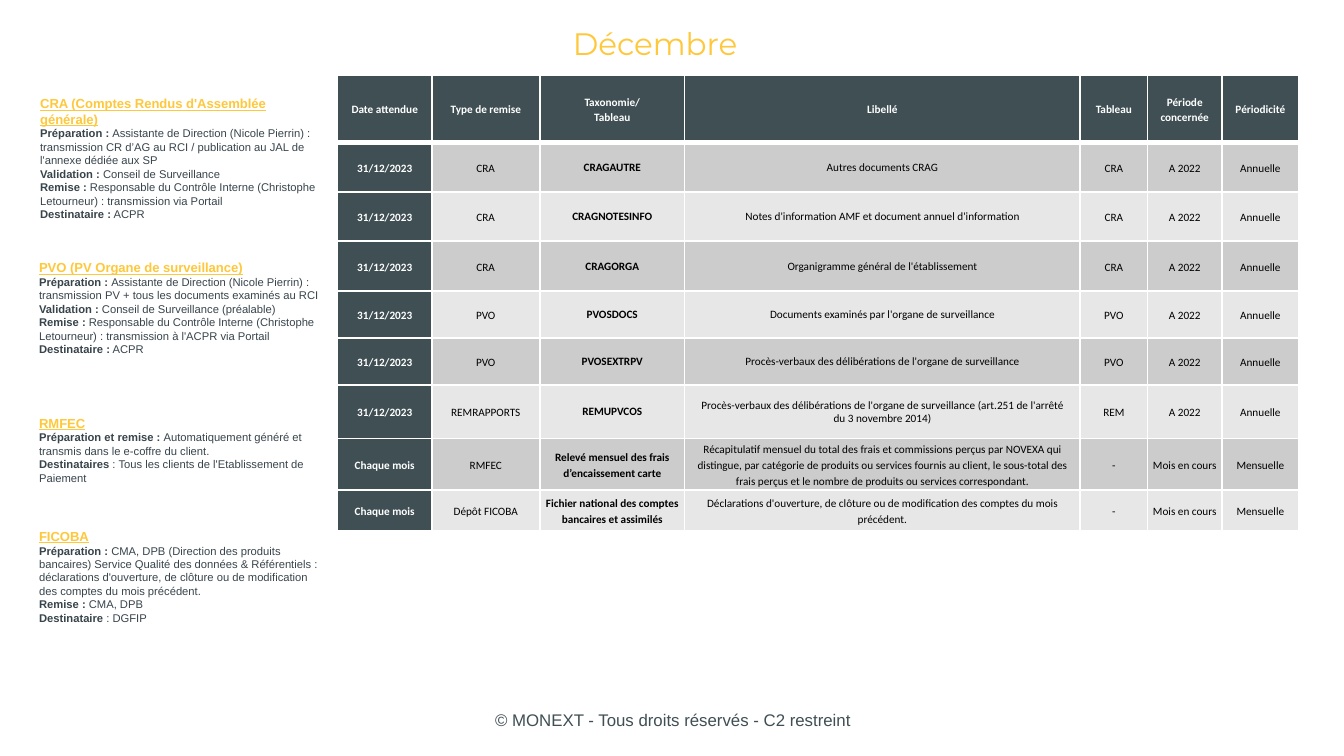
from lxml import etree
from pptx import Presentation
from pptx.dml.color import RGBColor
from pptx.enum.text import MSO_ANCHOR, PP_ALIGN
from pptx.oxml.ns import qn
from pptx.util import Cm, Pt

CENTER, LEFT = PP_ALIGN.CENTER, PP_ALIGN.LEFT
MIDDLE, TOP = MSO_ANCHOR.MIDDLE, MSO_ANCHOR.TOP

SLATE = RGBColor(0x40, 0x4F, 0x54)
INK = RGBColor(0x38, 0x44, 0x4B)
YELLOW = RGBColor(0xFF, 0xC8, 0x3A)
WHITE = RGBColor(0xFF, 0xFF, 0xFF)
BLACK = RGBColor(0x00, 0x00, 0x00)
GREY = RGBColor(0xCC, 0xCC, 0xCC)
LIGHT_GREY = RGBColor(0xE7, 0xE7, 0xE7)


class Page:
    """Current slide and its house style."""

    heading = {"name": "Arial", "size": Pt(7), "bold": True, "underline": True}
    label = {"name": "Arial", "size": Pt(6), "bold": True}
    body = {"name": "Arial", "size": Pt(6), "bold": False}
    cell_font = {"name": "Calibri", "size": Pt(6)}

    def __init__(self, deck):
        self.slide = deck.slides.add_slide(deck.slide_layouts[6])

    def fill_frame(self, frame, lines, align, spacing=None):
        """Each line is a list of (text, format, colour) spans."""
        for index, spans in enumerate(lines):
            para = frame.paragraphs[0] if index == 0 else frame.add_paragraph()
            para.alignment = align
            if spacing:
                para.line_spacing = spacing
            for text, style, color in spans:
                span = para.add_run()
                span.text = text
                for name, value in style.items():
                    setattr(span.font, name, value)
                span.font.color.rgb = color

    def text(self, left, top, width, height, lines, align=LEFT, anchor=TOP):
        box = self.slide.shapes.add_textbox(Cm(left), Cm(top), Cm(width), Cm(height))
        box.text_frame.word_wrap = True
        box.text_frame.vertical_anchor = anchor
        self.fill_frame(box.text_frame, lines, align)

    def note(self, left, top, height, title, details):
        lines = [[(title, self.heading, YELLOW)]]
        for label, text in details:
            lines.append([(label, self.label, INK), (text, self.body, INK)])
        self.text(left, top, 5.87, height, lines)

    def border(self, cell, bottom):
        properties = cell._tc.get_or_add_tcPr()
        for side, width in (("lnL", 1), ("lnR", 1), ("lnT", 1), ("lnB", bottom)):
            line = etree.SubElement(properties, qn(f"a:{side}"), w=str(Pt(width)))
            fill = etree.SubElement(line, qn("a:solidFill"))
            etree.SubElement(fill, qn("a:srgbClr"), val=str(WHITE))

    def cell(self, cell, text, fill, color, bold, roomy, bottom):
        self.border(cell, bottom)
        cell.fill.solid()
        cell.fill.fore_color.rgb = fill
        cell.vertical_anchor = MIDDLE
        cell.margin_left = cell.margin_right = Cm(0.25 if roomy else 0.08)
        cell.margin_top = cell.margin_bottom = Cm(0.25 if roomy else 0.05)
        style = {**self.cell_font, "bold": bold}
        lines = [[(part, style, color)] for part in text.split("\n")]
        self.fill_frame(cell.text_frame, lines, CENTER, None if roomy else 1.15)

    def table(self, left, top, widths, heights, rows):
        table = self.slide.shapes.add_table(
            len(rows), len(widths), Cm(left), Cm(top), Cm(sum(widths)), Cm(sum(heights))
        ).table
        table.horz_banding = False
        for column, width in zip(table.columns, widths):
            column.width = Cm(width)
        for r, (row, height) in enumerate(zip(rows, heights)):
            table.rows[r].height = Cm(height)
            band = GREY if r % 2 else LIGHT_GREY
            for c, text in enumerate(row):
                dark = r == 0 or c == 0
                self.cell(
                    table.cell(r, c), text,
                    fill=SLATE if dark else band,
                    color=WHITE if dark else BLACK,
                    bold=dark or c == 2,
                    roomy=1 <= r <= 6 and c in (2, 3),
                    bottom=3 if r == 0 else 1,
                )


HEADERS = ("Date attendue", "Type de remise", "Taxonomie/\nTableau", "Libellé",
           "Tableau", "Période concernée", "Périodicité")

# Type, taxonomy, wording, table
YEARLY = (
    ("CRA", "CRAGAUTRE", "Autres documents CRAG", "CRA"),
    ("CRA", "CRAGNOTESINFO", "Notes d'information AMF et document annuel d'information", "CRA"),
    ("CRA", "CRAGORGA", "Organigramme général de l'établissement", "CRA"),
    ("PVO", "PVOSDOCS", "Documents examinés par l'organe de surveillance", "PVO"),
    ("PVO", "PVOSEXTRPV", "Procès-verbaux des délibérations de l'organe de surveillance", "PVO"),
    ("REMRAPPORTS", "REMUPVCOS", "Procès-verbaux des délibérations de l'organe de surveillance "
     "(art.251 de l'arrêté du 3 novembre 2014)", "REM"),
)
MONTHLY = (
    ("RMFEC", "Relevé mensuel des frais d’encaissement carte",
     "Récapitulatif mensuel du total des frais et commissions perçus par NOVEXA qui distingue, "
     "par catégorie de produits ou services fournis au client, le sous-total des frais perçus "
     "et le nombre de produits ou services correspondant.", "-"),
    ("Dépôt FICOBA", "Fichier national des comptes bancaires et assimilés",
     "Déclarations d'ouverture, de clôture ou de modification des comptes du mois précédent.", "-"),
)

# Left, top, height, title, details
NOTES = (
    (0.51, 1.68, 2.67, "CRA (Comptes Rendus d'Assemblée générale)", (
        ("Préparation : ", "Assistante de Direction (Nicole Pierrin) : transmission CR d’AG au RCI "
         "/ publication au JAL de l'annexe dédiée aux SP"),
        ("Validation : ", "Conseil de Surveillance"),
        ("Remise : ", "Responsable du Contrôle Interne (Christophe Letourneur) : "
         "transmission via Portail"),
        ("Destinataire :", " ACPR"))),
    (0.49, 4.78, 2.49, "PVO (PV Organe de surveillance)", (
        ("Préparation : ", "Assistante de Direction (Nicole Pierrin) : transmission PV "
         "+ tous les documents examinés au RCI"),
        ("Validation : ", "Conseil de Surveillance (préalable)"),
        ("Remise : ", "Responsable du Contrôle Interne (Christophe Letourneur) : "
         "transmission à l'ACPR via Portail"),
        ("Destinataire :", " ACPR"))),
    (0.49, 7.72, 1.63, "RMFEC", (
        ("Préparation et remise : ", "Automatiquement généré et transmis dans le e-coffre du client."),
        ("Destinataires", " : Tous les clients de l'Etablissement de Paiement"))),
    (0.49, 9.86, 2.34, "FICOBA", (
        ("Préparation :", " CMA, DPB (Direction des produits bancaires) Service Qualité des données "
         "& Référentiels : déclarations d'ouverture, de clôture ou de modification des comptes "
         "du mois précédent."),
        ("Remise : ", "CMA, DPB"),
        ("Destinataire", " : DGFIP"))),
)


def main():
    deck = Presentation()
    deck.slide_width, deck.slide_height = Cm(25.4), Cm(14.29)
    page = Page(deck)

    # Footer and title
    page.text(8.69, 13.23, 8.05, 0.76,
              [[("© MONEXT - Tous droits réservés - C2 restreint",
                 {"name": "Arial", "size": Pt(9)}, SLATE)]], CENTER, MIDDLE)
    page.text(5.33, 0.36, 14.1, 0.91,
              [[("Décembre", {"name": "Montserrat", "size": Pt(16.6)}, YELLOW)]], CENTER, MIDDLE)

    # Schedule of filings
    rows = [HEADERS]
    rows += [("31/12/2023", *row, "A 2022", "Annuelle") for row in YEARLY]
    rows += [("Chaque mois", *row, "Mois en cours", "Mensuelle") for row in MONTHLY]
    page.table(6.38, 1.42, (1.78, 2.04, 2.74, 7.47, 1.28, 1.4, 1.46),
               (1.28, 0.93, 0.93, 0.94, 0.89, 0.89, 0.89, 0.79, 0.76), rows)

    # Responsibilities
    for note in NOTES:
        page.note(*note)

    deck.save("out.pptx")


if __name__ == "__main__":
    main()
